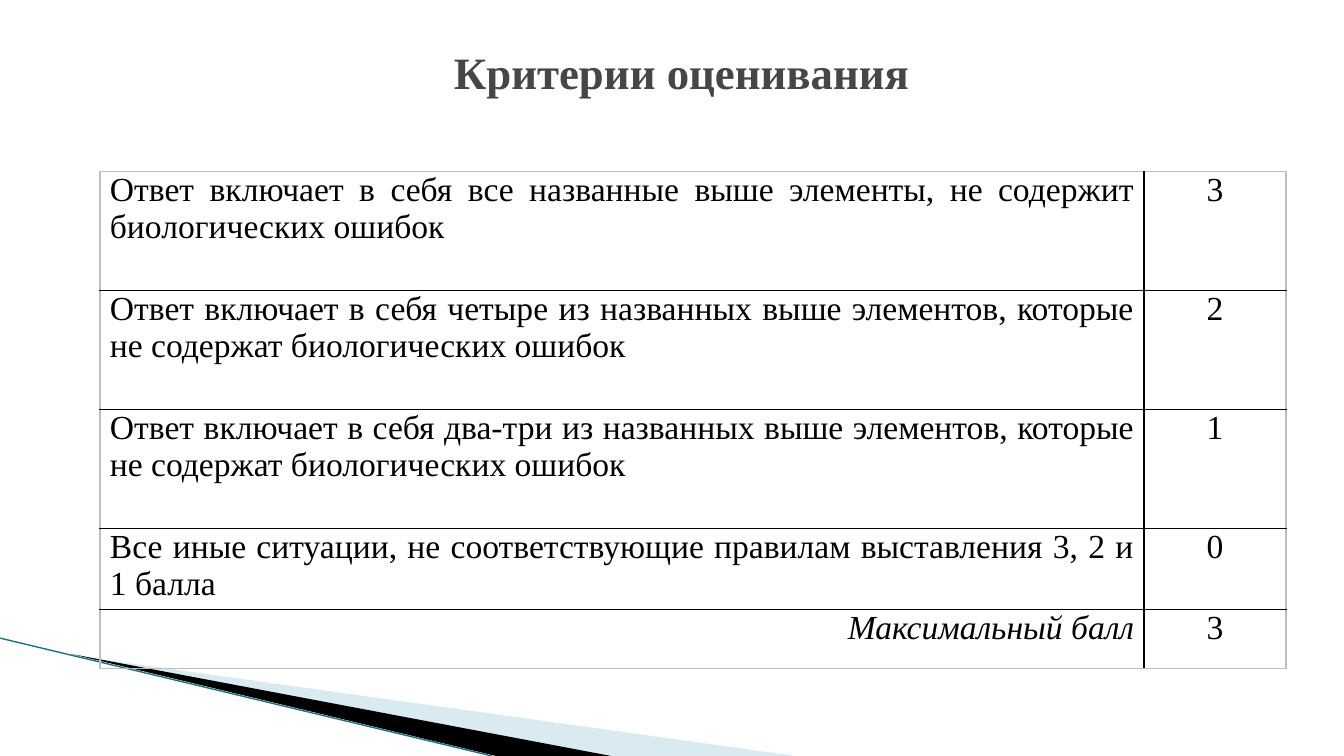
from dataclasses import dataclass

from lxml import etree
from pptx import Presentation
from pptx.dml.color import RGBColor
from pptx.enum.shapes import MSO_CONNECTOR
from pptx.enum.text import MSO_ANCHOR, PP_ALIGN
from pptx.oxml.ns import qn
from pptx.util import Cm, Pt

LEFT, CENTER, RIGHT, JUSTIFY = PP_ALIGN.LEFT, PP_ALIGN.CENTER, PP_ALIGN.RIGHT, PP_ALIGN.JUSTIFY
MIDDLE = MSO_ANCHOR.MIDDLE
STRAIGHT = MSO_CONNECTOR.STRAIGHT

BLACK = RGBColor(0x00, 0x00, 0x00)
GRAY = RGBColor(0x46, 0x46, 0x46)
FRAME_GRAY = RGBColor(0xBF, 0xBF, 0xBF)
PALE_BLUE = RGBColor(0xA0, 0xCB, 0xDC)
TEAL = RGBColor(0x1B, 0x6E, 0x80)

FONT = "Times New Roman"
SLIDE_WIDTH, SLIDE_HEIGHT = 33.87, 19.05
COLUMN_WIDTHS = (26.31, 3.58)


@dataclass
class Criterion:
    text: str
    score: str
    height: float = 3
    align: PP_ALIGN = JUSTIFY
    italic: bool = False


@dataclass
class Wedge:
    points: tuple[tuple[float, float], ...]
    color: RGBColor
    opacity: int = 100


CRITERIA = (
    Criterion("Ответ включает в себя все названные выше элементы, "
              "не содержит биологических ошибок", "3"),
    Criterion("Ответ включает в себя четыре из названных выше элементов, "
              "которые не содержат биологических ошибок", "2"),
    Criterion("Ответ включает в себя два-три из названных выше элементов, "
              "которые не содержат биологических ошибок", "1"),
    Criterion("Все иные ситуации, не соответствующие правилам выставления "
              "3, 2 и 1 балла", "0", height=1.88),
    Criterion("Максимальный балл", "3", height=1.5, align=RIGHT, italic=True),
)

WEDGES = (
    Wedge(((1.85, 16.52), (20.05, SLIDE_HEIGHT), (15.4, SLIDE_HEIGHT)), PALE_BLUE, 40),
    Wedge(((1.8, 16.48), (15.4, SLIDE_HEIGHT), (12.5, SLIDE_HEIGHT)), BLACK),
)


def write_text(frame, text: str, *, size: float = 24, color: RGBColor = BLACK,
               align: PP_ALIGN = LEFT, bold: bool = False, italic: bool = False) -> None:
    paragraph = frame.paragraphs[0]
    paragraph.alignment = align
    run = paragraph.add_run()
    run.text = text
    run.font.name = FONT
    run.font.size = Pt(size)
    run.font.color.rgb = color
    run.font.bold = bold
    run.font.italic = italic


def draw_wedge(slide, wedge: Wedge) -> None:
    start, *others = [(Cm(x), Cm(y)) for x, y in wedge.points]
    builder = slide.shapes.build_freeform(*start)
    builder.add_line_segments(others, close=True)
    shape = builder.convert_to_shape()
    shape.shadow.inherit = False
    shape.line.fill.background()
    shape.fill.solid()
    shape.fill.fore_color.rgb = wedge.color
    if wedge.opacity < 100:
        color = shape.element.spPr.find(f"{qn('a:solidFill')}/{qn('a:srgbClr')}")
        etree.SubElement(color, qn("a:alpha"), val=str(wedge.opacity * 1000))


def draw_edge_line(slide) -> None:
    edge = slide.shapes.add_connector(STRAIGHT, 0, Cm(16.08), Cm(12.4), Cm(SLIDE_HEIGHT))
    edge.line.color.rgb = TEAL
    edge.line.width = Pt(0.95)
    etree.SubElement(edge.element.spPr, qn("a:effectLst"))


def add_border(cell, side: str, color: RGBColor) -> None:
    line = etree.SubElement(cell._tc.get_or_add_tcPr(), qn(f"a:ln{side}"), w=str(Pt(1)))
    fill = etree.SubElement(line, qn("a:solidFill"))
    etree.SubElement(fill, qn("a:srgbClr"), val=str(color))


def draw_criteria(slide) -> None:
    table = slide.shapes.add_table(
        len(CRITERIA), len(COLUMN_WIDTHS), Cm(2.52), Cm(4.32),
        Cm(sum(COLUMN_WIDTHS)), Cm(sum(c.height for c in CRITERIA))).table
    table.first_row = False
    table.horz_banding = False
    for column, width in zip(table.columns, COLUMN_WIDTHS):
        column.width = Cm(width)

    last_row, last_column = len(CRITERIA) - 1, len(COLUMN_WIDTHS) - 1
    for row, criterion in enumerate(CRITERIA):
        table.rows[row].height = Cm(criterion.height)
        description, score = table.cell(row, 0), table.cell(row, 1)
        write_text(description.text_frame, criterion.text,
                   align=criterion.align, italic=criterion.italic)
        write_text(score.text_frame, criterion.score, align=CENTER)
        for column, cell in enumerate((description, score)):
            cell.margin_left = cell.margin_right = Cm(0.25)
            cell.margin_top = cell.margin_bottom = 0
            outer_sides = {"L": column == 0, "R": column == last_column,
                           "T": row == 0, "B": row == last_row}
            for side, is_outer in outer_sides.items():
                add_border(cell, side, FRAME_GRAY if is_outer else BLACK)
            cell.fill.background()


def draw_title(slide) -> None:
    frame = slide.shapes.add_textbox(Cm(1.7), Cm(0.8), Cm(30.96), Cm(2.03)).text_frame
    frame.word_wrap = True
    frame.vertical_anchor = MIDDLE
    write_text(frame, "Критерии оценивания", size=32, color=GRAY, align=CENTER, bold=True)


def main() -> None:
    presentation = Presentation()
    presentation.slide_width = Cm(SLIDE_WIDTH)
    presentation.slide_height = Cm(SLIDE_HEIGHT)
    slide = presentation.slides.add_slide(presentation.slide_layouts[6])
    for wedge in WEDGES:
        draw_wedge(slide, wedge)
    draw_edge_line(slide)
    draw_title(slide)
    draw_criteria(slide)
    presentation.save("out.pptx")


if __name__ == "__main__":
    main()
